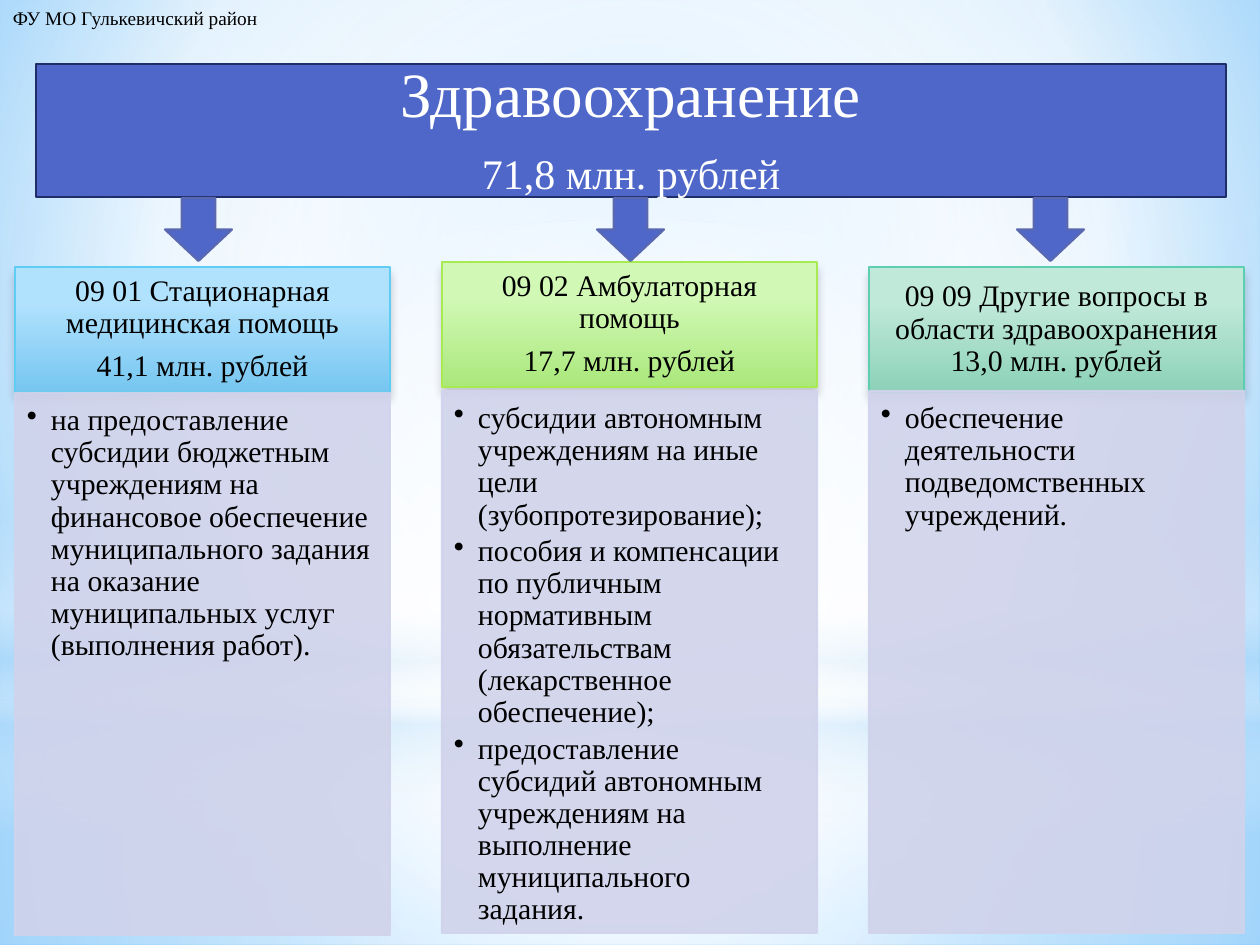
from lxml import etree
from pptx import Presentation
from pptx.dml.color import RGBColor
from pptx.enum.shapes import MSO_SHAPE
from pptx.enum.text import MSO_ANCHOR, PP_ALIGN
from pptx.oxml import parse_xml
from pptx.oxml.ns import nsdecls, qn
from pptx.util import Pt

RECT, OVAL, DOWN_ARROW = MSO_SHAPE.RECTANGLE, MSO_SHAPE.OVAL, MSO_SHAPE.DOWN_ARROW
TOP, MIDDLE = MSO_ANCHOR.TOP, MSO_ANCHOR.MIDDLE
LEFT, CENTER = PP_ALIGN.LEFT, PP_ALIGN.CENTER

EMU_PER_PX = 914400 / 126
FONT = "Times New Roman"

BLACK = RGBColor(0x00, 0x00, 0x00)
WHITE = RGBColor(0xFF, 0xFF, 0xFF)
SKY = RGBColor(0x9E, 0xD5, 0xFF)
DEEP_SKY = RGBColor(0x5B, 0xB9, 0xFF)
HAZE = RGBColor(0xB4, 0xDC, 0xFA)
INDIGO = RGBColor(0x4E, 0x67, 0xC8)
NAVY = RGBColor(0x1F, 0x2E, 0x69)
ARROW_EDGE = RGBColor(0x59, 0x68, 0xB0)
LAVENDER = RGBColor(0xD0, 0xD3, 0xEB)
BLUE = (RGBColor(0xB1, 0xE2, 0xFD), RGBColor(0x76, 0xC6, 0xF1), RGBColor(0x5E, 0xCC, 0xF3))
GREEN = (RGBColor(0xD1, 0xF8, 0xB5), RGBColor(0xAA, 0xE8, 0x7B), RGBColor(0xA7, 0xEA, 0x52))
TEAL = (RGBColor(0xC0, 0xE9, 0xDA), RGBColor(0x8C, 0xD1, 0xB8), RGBColor(0x5D, 0xCE, 0xAF))

# Background layers: shape, box, stops (position, colour, opacity), centre
CENTRE = (50, 50, 50, 50)
LAYERS = [
    (RECT, (0, 703, 1260, 242), [(0, WHITE, 91), (37, WHITE, 76), (100, HAZE, 79)], CENTRE),
    (RECT, (0, 0, 1260, 703), [(0, WHITE, 89), (48, WHITE, 62), (100, HAZE, 79)], CENTRE),
    (RECT, (0, 519, 1260, 315), [(0, WHITE, 0), (29, WHITE, 30), (45, HAZE, 40),
                                 (55, WHITE, 26), (65, HAZE, 60), (100, WHITE, 0)], None),
    (OVAL, (0, 220, 1260, 703), [(0, WHITE, 100), (56, WHITE, 0)], CENTRE),
]

# Columns: heading top, body top, arrow left, colours, heading, items
COLUMNS = [
    (267, 393, 165, BLUE,
     ["09 01 Стационарная медицинская помощь", "41,1 млн. рублей"],
     ["на предоставление субсидии бюджетным учреждениям на финансовое обеспечение "
      "муниципального задания на оказание муниципальных услуг (выполнения работ)."]),
    (262, 391, 597, GREEN,
     ["09 02 Амбулаторная помощь", "17,7 млн. рублей"],
     ["субсидии автономным учреждениям на иные цели (зубопротезирование);",
      "пособия и компенсации по публичным нормативным обязательствам "
      "(лекарственное обеспечение);",
      "предоставление субсидий автономным учреждениям на выполнение "
      "муниципального задания."]),
    (267, 391, 1017, TEAL,
     ["09 09 Другие вопросы в области здравоохранения 13,0 млн. рублей"],
     ["обеспечение деятельности подведомственных учреждений."]),
]
COLUMN_LEFT, COLUMN_PITCH, COLUMN_WIDTH = 15, 427, 375
HEADING_HEIGHT, BODY_HEIGHT = 125, 542


def px(length):
    return round(length * EMU_PER_PX)


def gradient(stops, centre=None):
    """Gradient fill: round about a centre, or from top to bottom without one."""
    marks = "".join(
        f'<a:gs pos="{pos * 1000}"><a:srgbClr val="{color}">'
        f'<a:alpha val="{opacity * 1000}"/></a:srgbClr></a:gs>'
        for pos, color, opacity in stops)
    if centre:
        sides = " ".join(f'{side}="{pct * 1000}"' for side, pct in zip("ltrb", centre))
        course = f'<a:path path="circle"><a:fillToRect {sides}/></a:path>'
    else:
        course = '<a:lin ang="5400000" scaled="0"/>'
    return parse_xml(f'<a:gradFill {nsdecls("a")} rotWithShape="1">'
                     f"<a:gsLst>{marks}</a:gsLst>{course}</a:gradFill>")


def swap_fill(properties, new_fill):
    properties.replace(properties.find(qn("a:solidFill")), new_fill)


def set_opacity(properties, percent):
    color = properties.find(qn("a:solidFill"))[0]
    etree.SubElement(color, qn("a:alpha"), val=str(percent * 1000))


def add_box(slide, kind, box, fill, line=None, line_width=1.25):
    shape = slide.shapes.add_shape(kind, *map(px, box))
    shape.shadow.inherit = False
    shape.fill.solid()
    shape.fill.fore_color.rgb = fill
    if line is None:
        shape.line.fill.background()
    else:
        shape.line.color.rgb = line
        shape.line.width = Pt(line_width)
    return shape


def write_text(shape, paragraphs, sizes=(17,), color=BLACK, align=LEFT, anchor=TOP,
               insets=(13, 6, 13, 6), line_spacing=0.9, gap=0, bullets=False):
    """Fill a shape with paragraphs; gap is the space after, as a share of the size."""
    frame = shape.text_frame
    frame.word_wrap = True
    frame.vertical_anchor = anchor
    (frame.margin_left, frame.margin_top,
     frame.margin_right, frame.margin_bottom) = map(px, insets)
    for index, text in enumerate(paragraphs):
        paragraph = frame.paragraphs[0] if index == 0 else frame.add_paragraph()
        size = sizes[min(index, len(sizes) - 1)]
        paragraph.alignment = align
        paragraph.line_spacing = line_spacing
        paragraph.space_after = Pt(size * gap)
        run = paragraph.add_run()
        run.text = text
        run.font.name = FONT
        run.font.size = Pt(size)
        run.font.color.rgb = color
        if bullets:
            props = paragraph._p.get_or_add_pPr()
            props.set("marL", str(px(24)))
            props.set("indent", str(-px(24)))
            etree.SubElement(props, qn("a:buChar"), char="•")


def add_background(slide):
    slide.background.fill.solid()
    swap_fill(next(slide.element.iter(qn("p:bgPr"))),
              gradient([(0, SKY, 100), (60, WHITE, 100), (100, DEEP_SKY, 100)],
                       (20, 10, 20, 60)))
    for kind, box, stops, centre in LAYERS:
        layer = add_box(slide, kind, box, WHITE)
        swap_fill(layer.element.spPr, gradient(stops, centre))


def add_heading(slide, box, colors, paragraphs):
    light, dark, edge = colors
    heading = add_box(slide, RECT, box, light, edge, 0.75)
    props = heading.element.spPr
    swap_fill(props, gradient([(28, light, 100), (100, dark, 100)]))
    props.find(qn("a:effectLst")).append(parse_xml(
        f'<a:outerShdw {nsdecls("a")} blurRad="{Pt(5)}" dist="{Pt(4)}" dir="5400000" '
        f'rotWithShape="0"><a:srgbClr val="{BLACK}"><a:alpha val="20000"/></a:srgbClr>'
        "</a:outerShdw>"))
    write_text(heading, paragraphs, align=CENTER, anchor=MIDDLE,
               insets=(16, 10, 16, 10), gap=0.35)


def add_body(slide, box, items):
    body = add_box(slide, RECT, box, LAVENDER, LAVENDER)
    set_opacity(body.element.spPr, 90)
    set_opacity(body.element.spPr.find(qn("a:ln")), 90)
    write_text(body, items, insets=(12, 12, 16, 19), gap=0.15, bullets=True)


def main():
    prs = Presentation()
    prs.slide_width, prs.slide_height = px(1260), px(945)
    slide = prs.slides.add_slide(prs.slide_layouts[6])
    add_background(slide)

    # Spending columns
    for index, (top, body_top, _, colors, heading, items) in enumerate(COLUMNS):
        left = COLUMN_LEFT + index * COLUMN_PITCH
        add_heading(slide, (left, top, COLUMN_WIDTH, HEADING_HEIGHT), colors, heading)
        add_body(slide, (left, body_top, COLUMN_WIDTH, BODY_HEIGHT), items)

    # Total
    total = add_box(slide, RECT, (36, 64, 1190, 133), INDIGO, NAVY)
    write_text(total, ["Здравоохранение", "71,8 млн. рублей"], sizes=(36, 24),
               color=WHITE, align=CENTER, anchor=MIDDLE, gap=0.35)

    # Issuing office
    office = slide.shapes.add_textbox(0, 0, px(302), px(36))
    write_text(office, ["ФУ МО Гулькевичский район"], sizes=(11,), line_spacing=1.0)

    # Arrows from the total to the columns
    for _, _, arrow_left, *_ in COLUMNS:
        add_box(slide, DOWN_ARROW, (arrow_left, 198, 67, 63), INDIGO, ARROW_EDGE)

    prs.save("out.pptx")


if __name__ == "__main__":
    main()
